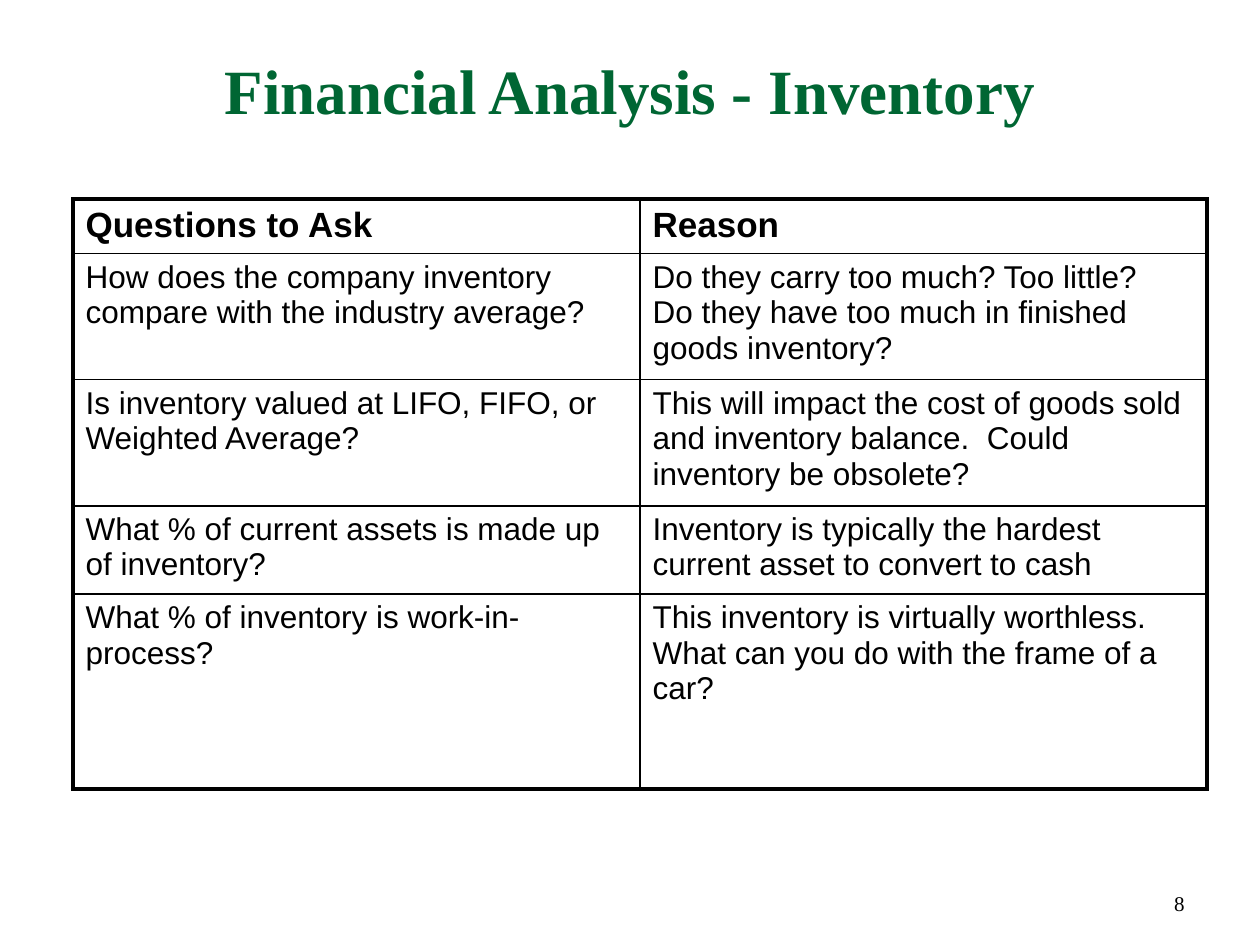
from pptx import Presentation
from pptx.dml.color import RGBColor as Rgb
from pptx.enum.text import MSO_ANCHOR as Anchor, PP_ALIGN as Align
from pptx.oxml.ns import qn
from pptx.util import Emu, Pt
from lxml.etree import SubElement as Sub

SCALE = 914400 / 126
INK = "000000"
GREEN = "006633"
SERIF = "Times New Roman"
SANS = "Arial"
HEAD = ("Questions to Ask", "Reason")
ROWS = [
    ("How does the company inventory compare with the industry average?",
     "Do they carry too much? Too little?  Do they have too much in finished goods inventory?"),
    ("Is inventory valued at LIFO, FIFO, or Weighted Average?",
     "This will impact the cost of goods sold and inventory balance.  Could inventory be obsolete?"),
    ("What % of current assets is made up of inventory?",
     "Inventory is typically the hardest current asset to convert to cash"),
    ("What % of inventory is work-in-process?",
     "This inventory is virtually worthless.  What can you do with the frame of a car?"),
]
TALL = (54, 126, 126, 88, 195)


def px(num):
    return Emu(round(num * SCALE))


def color(code):
    return Rgb.from_string(code)


def write(frame, words, size, face, bold=False, tint=INK, align=Align.LEFT):
    para = frame.paragraphs[0]
    para.alignment = align
    run = para.add_run()
    run.text = words
    font = run.font
    font.size, font.name, font.bold = Pt(size), face, bold
    font.color.rgb = color(tint)


def add_text(slide, box, words, size, anchor, align, top=6, **style):
    frame = slide.shapes.add_textbox(*map(px, box)).text_frame
    frame.word_wrap = True
    frame.vertical_anchor = anchor
    frame.margin_top = px(top)
    write(frame, words, size, SERIF, align=align, **style)


def add_edge(cell, side, width):
    line = Sub(cell._tc.get_or_add_tcPr(), qn("a:" + side), w=str(Pt(width)))
    fill = Sub(line, qn("a:solidFill"))
    Sub(fill, qn("a:srgbClr"), val=INK)


def add_grid(slide, box):
    data = [HEAD] + ROWS
    high, wide = len(data), len(HEAD)
    grid = slide.shapes.add_table(high, wide, *map(px, box)).table
    grid.horz_banding = grid.first_row = False
    for col in grid.columns:
        col.width = px(box[2] / wide)
    for r, (row, tall) in enumerate(zip(data, TALL)):
        grid.rows[r].height = px(tall)
        for c, words in enumerate(row):
            cell = grid.cell(r, c)
            write(cell.text_frame, words, 18 if r else 20, SANS, bold=r == 0)
            outer = {"lnL": c == 0, "lnR": c == wide - 1,
                     "lnT": r == 0, "lnB": r == high - 1}
            for side, thick in outer.items():
                add_edge(cell, side, 2.25 if thick else 1)
            cell.fill.background()


def main():
    deck = Presentation()
    deck.slide_width, deck.slide_height = px(1260), px(945)
    slide = deck.slides.add_slide(deck.slide_layouts[6])
    add_text(slide, (998, 892, 199, 30), "8", 12, Anchor.BOTTOM, Align.RIGHT)
    add_text(slide, (63, 38, 1134, 157), "Financial Analysis - Inventory", 36,
             Anchor.TOP, Align.CENTER, top=14, bold=True, tint=GREEN)
    add_grid(slide, (73, 199, 1134, sum(TALL)))
    deck.save("out.pptx")


if __name__ == "__main__":
    main()
